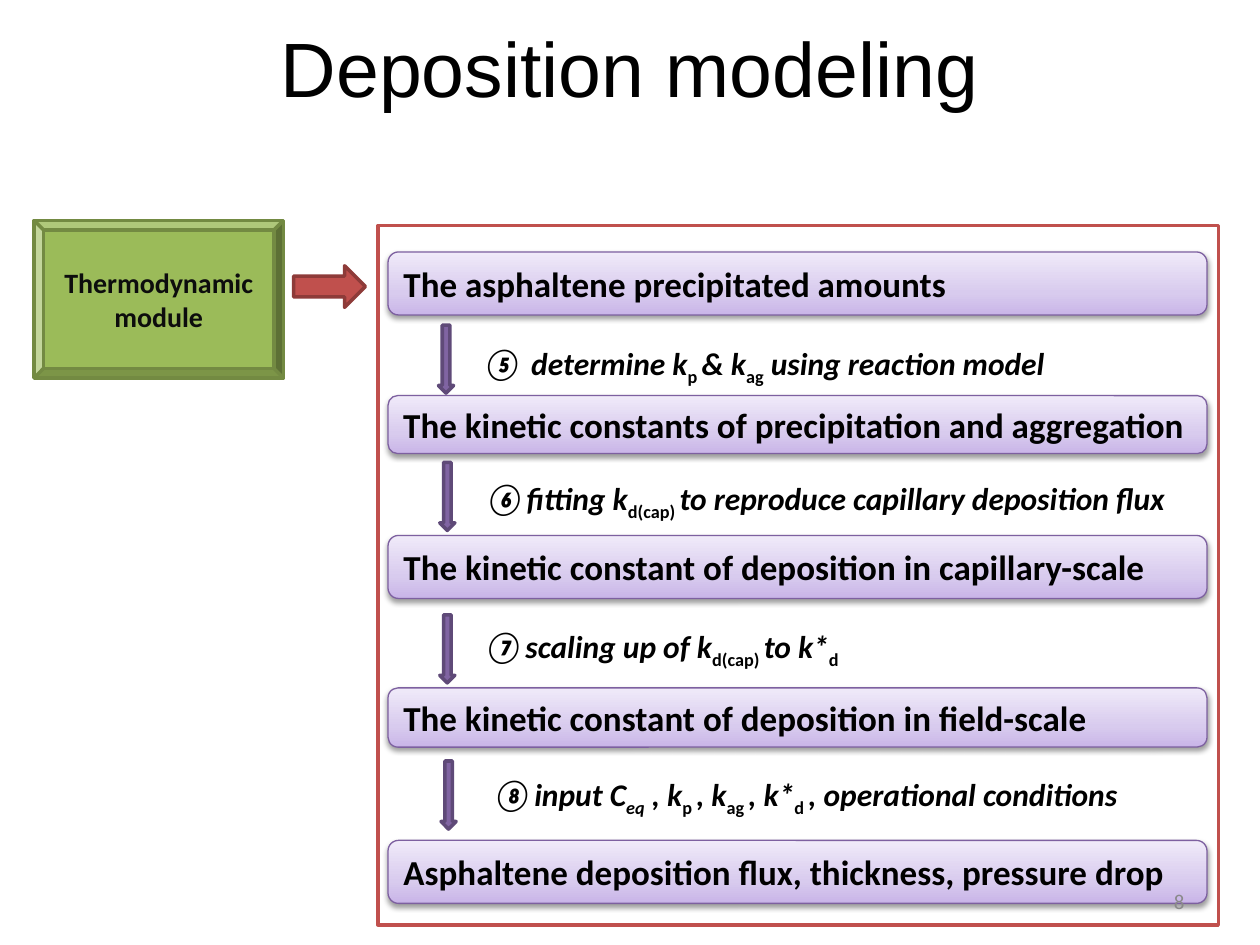
from lxml import etree
from pptx import Presentation
from pptx.dml.color import RGBColor
from pptx.enum.shapes import MSO_SHAPE as SHAPE
from pptx.enum.text import MSO_ANCHOR as ANCHOR, PP_ALIGN as ALIGN
from pptx.oxml import parse_xml
from pptx.oxml.ns import nsdecls, qn
from pptx.util import Inches, Pt

COLS, ROWS = 100, 75
LILAC = ((0, "C9B5E8"), (35, "D8CBEE"), (100, "F0EAF9"))


def rgb(value):
    return RGBColor.from_string(value)


def write(shape, text, size=18, font="Calibri", color="000000", bold=False,
          italic=False, align=ALIGN.LEFT, anchor=ANCHOR.MIDDLE, italic_subs=()):
    """Fill a shape with text; every second part between bars is a subscript."""
    tf = shape.text_frame
    tf.word_wrap = True
    tf.vertical_anchor = anchor
    p = tf.paragraphs[0]
    p.alignment = align
    for i, part in enumerate(text.split("|")):
        if not part:
            continue
        is_sub = i % 2 == 1
        r = p.add_run()
        r.text = part
        r.font.size, r.font.name, r.font.bold = Pt(size), font, bold
        r.font.italic = italic and (not is_sub or part in italic_subs)
        r.font.color.rgb = rgb(color)
        if is_sub:
            r.font._element.set("baseline", "-25000")


class Deck:
    """Holds the grid, the style and the current slide."""

    def __init__(self):
        self.prs = Presentation()
        self.prs.slide_width, self.prs.slide_height = Inches(10), Inches(7.5)
        self.col = self.prs.slide_width / COLS
        self.row = self.prs.slide_height / ROWS
        self.slide = self.prs.slides.add_slide(self.prs.slide_layouts[6])

    def place(self, x, y, w, h):
        return (round(x * self.col), round(y * self.row),
                round(w * self.col), round(h * self.row))

    def shape(self, kind, *at, fill, line, width=2):
        sp = self.slide.shapes.add_shape(kind, *self.place(*at))
        sp.shadow.inherit = False
        sp.fill.solid()
        sp.fill.fore_color.rgb = rgb(fill)
        sp.line.color.rgb = rgb(line)
        sp.line.width = Pt(width)
        return sp

    def text(self, text, *at, **style):
        write(self.slide.shapes.add_textbox(*self.place(*at)), text, **style)

    def stage(self, text, y, h):
        """Lilac gradient bar with a soft shadow below."""
        sp = self.shape(SHAPE.ROUNDED_RECTANGLE, 30.8, y, 65, h,
                        fill=LILAC[0][1], line="7D60A0", width=0.75)
        stops = "".join(f'<a:gs pos="{pos * 1000}"><a:srgbClr val="{c}"/></a:gs>'
                        for pos, c in LILAC)
        pr = sp._element.spPr
        pr.replace(pr.find(qn("a:solidFill")), parse_xml(
            f'<a:gradFill {nsdecls("a")} rotWithShape="1"><a:gsLst>{stops}</a:gsLst>'
            '<a:lin ang="16200000" scaled="0"/></a:gradFill>'))
        shadow = etree.SubElement(pr.find(qn("a:effectLst")), qn("a:outerShdw"),
                                  blurRad=str(Pt(3.1)), dist=str(Pt(1.6)),
                                  dir="5400000", rotWithShape="0")
        black = etree.SubElement(shadow, qn("a:srgbClr"), val="000000")
        etree.SubElement(black, qn("a:alpha"), val="38000")
        write(sp, text, size=20, bold=True)

    def step(self, text, x, y, arrow_x, arrow_y):
        """Down arrow with its numbered label at the right."""
        self.shape(SHAPE.DOWN_ARROW, arrow_x, arrow_y, 1.2, 5.4,
                   fill="8064A2", line="5F4A78")
        self.text(text, x, y, 97 - x, 4, bold=True, italic=True,
                  anchor=ANCHOR.TOP, italic_subs=("eq",))


STAGES = (
    ("The asphaltene precipitated amounts", 20, 5),
    ("The kinetic constants of precipitation and aggregation", 31.4, 4.6),
    ("The kinetic constant of deposition in capillary-scale", 42.5, 5),
    ("The kinetic constant of deposition in field-scale", 54.6, 4.7),
    ("Asphaltene deposition flux, thickness, pressure drop", 66.7, 5),
)
STEPS = (
    ("⑤ determine k|p |& k|ag| using reaction model", 37.3, 26.8, 34.8, 25.8),
    ("⑥fitting k|d(cap) |to reproduce capillary deposition flux",
     37.5, 37.5, 34.9, 36.7),
    ("⑦scaling up of k|d(cap) |to k*|d", 37.4, 49.3, 34.9, 48.8),
    ("⑧input C|eq| , k|p |, k|ag |, k*|d |, operational conditions",
     38.1, 61, 35, 60.4),
)


def main():
    deck = Deck()
    deck.text("Deposition modeling", 5, -0.2, 90, 11, size=44, font="Arial",
              align=ALIGN.CENTER)
    deck.shape(SHAPE.RECTANGLE, 30, 17.9, 66.7, 55.5, fill="FFFFFF", line="C0504D")
    for stage in STAGES:
        deck.stage(*stage)
    for step in STEPS:
        deck.step(*step)
    module = deck.shape(SHAPE.BEVEL, 2.7, 17.5, 19.8, 12.5,
                        fill="9BBB59", line="738A42")
    module.adjustments[0] = 0.06
    write(module, "Thermodynamic module", size=16, color="0D0D0D", bold=True,
          align=ALIGN.CENTER)
    deck.shape(SHAPE.RIGHT_ARROW, 23.3, 21.1, 5.7, 3.3, fill="C0504D", line="8E3B39")
    deck.text("8", 71.7, 69.5, 23.3, 4, size=12, color="898989", align=ALIGN.RIGHT)
    deck.prs.save("out.pptx")


if __name__ == "__main__":
    main()
